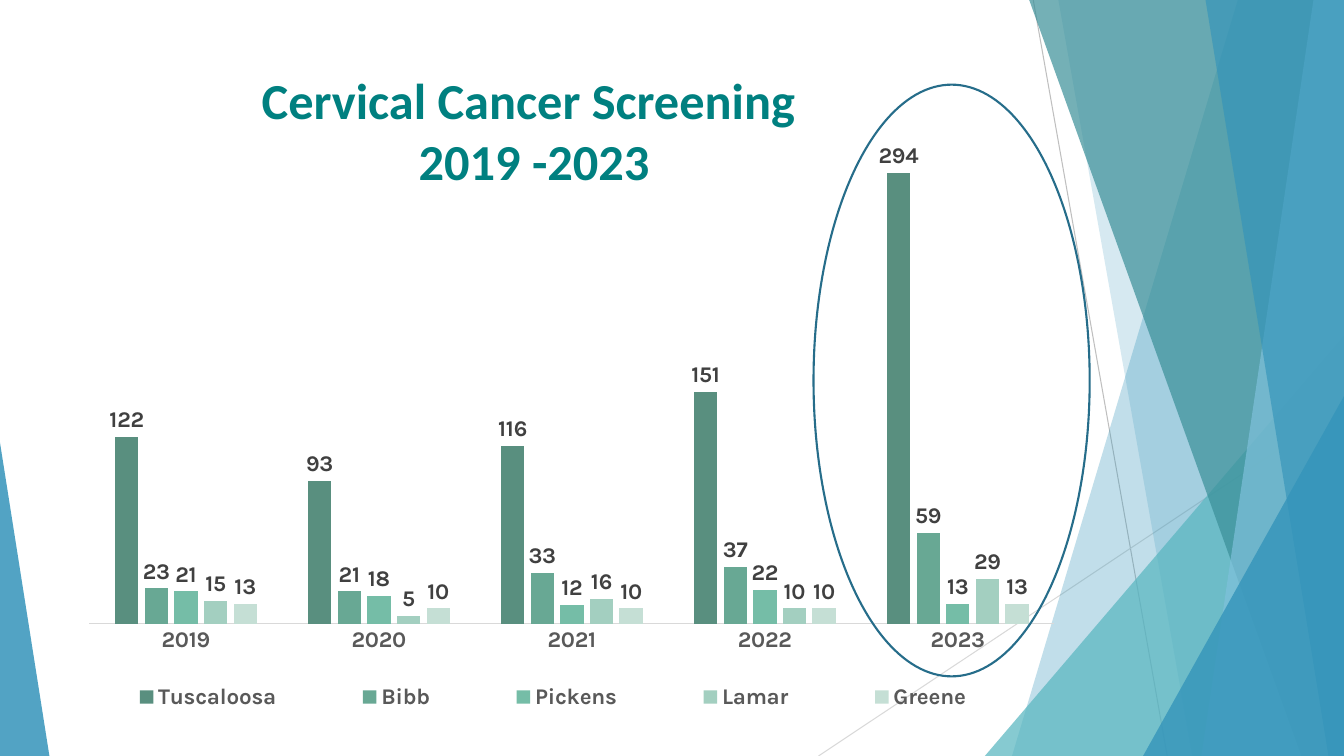
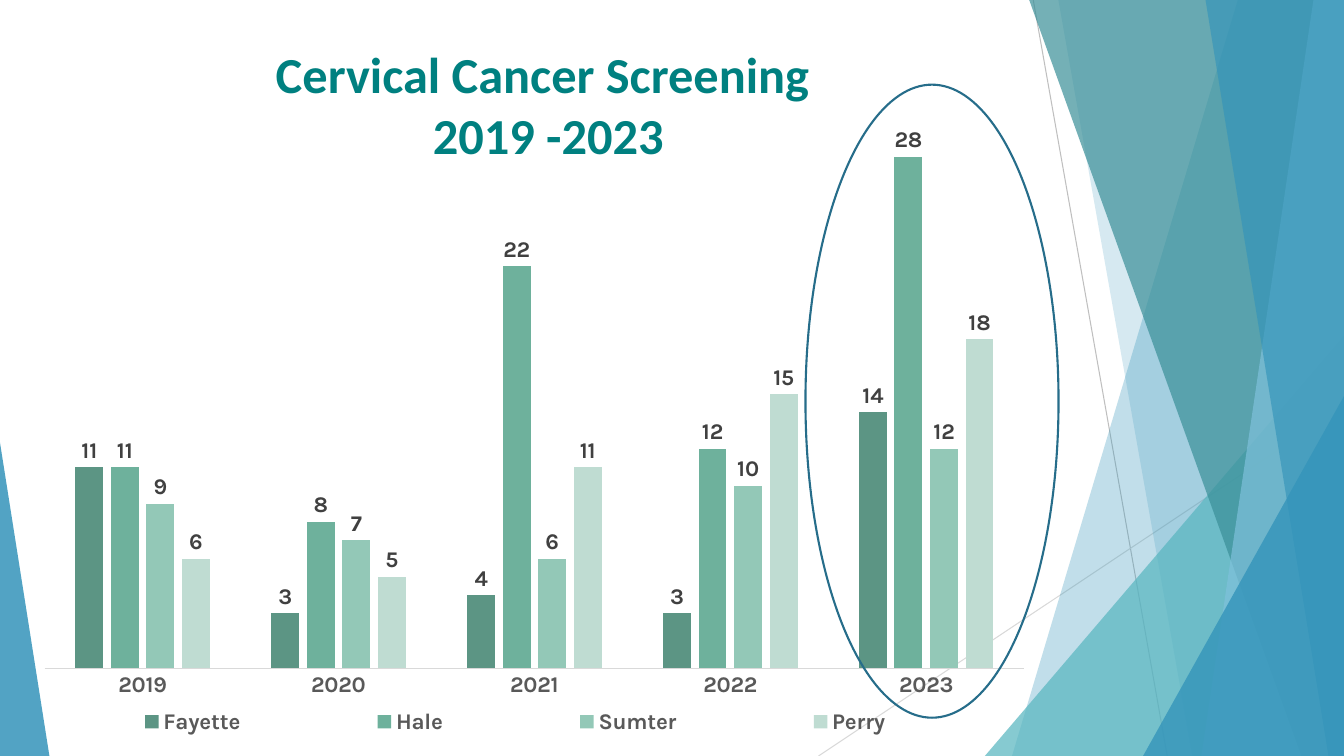
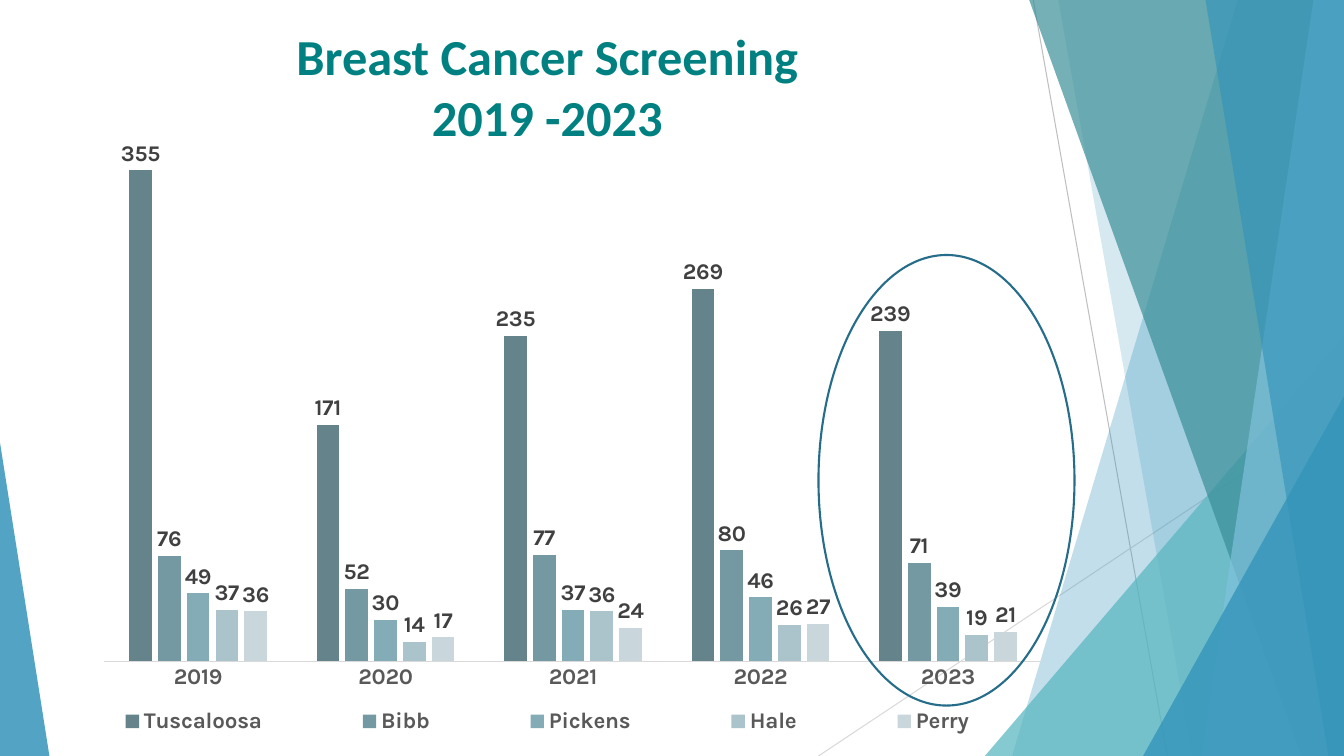
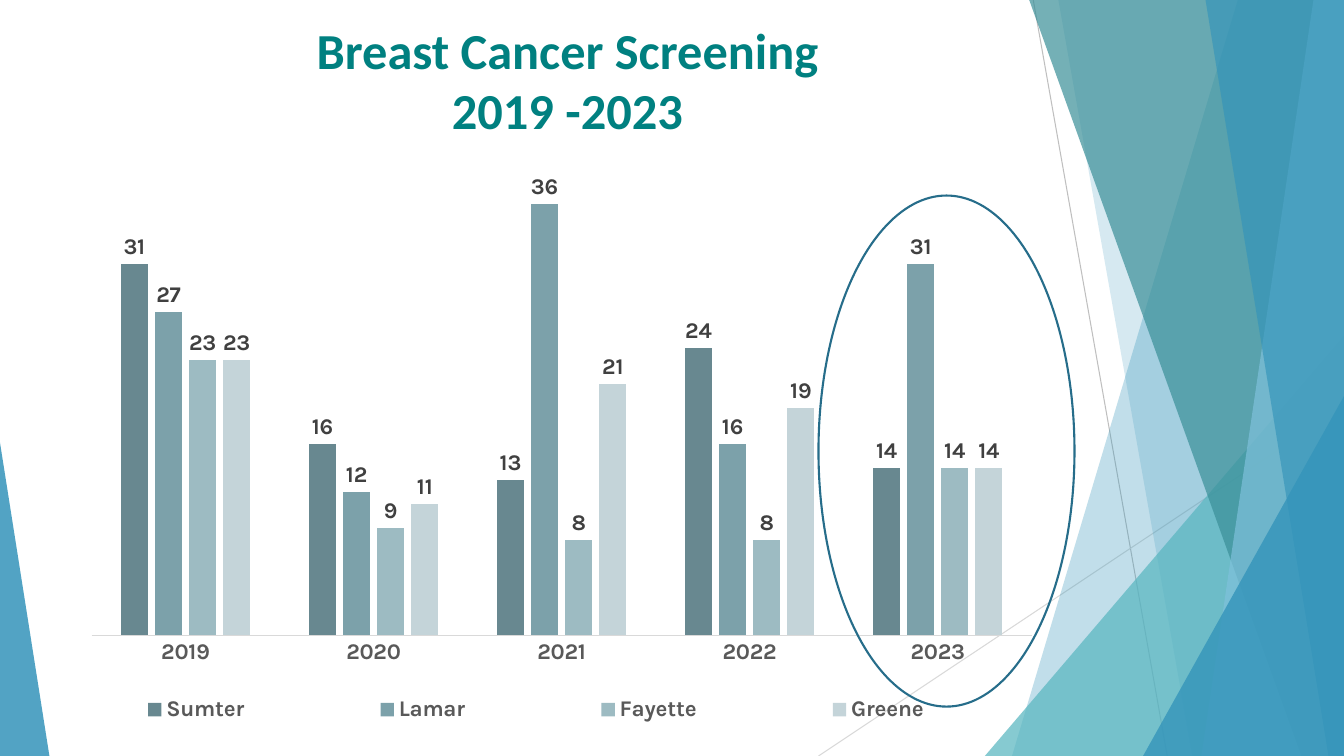
from pptx import Presentation
from pptx.chart.data import CategoryChartData as ChartData
from pptx.dml.color import RGBColor
from pptx.enum.chart import XL_CHART_TYPE as ChartType
from pptx.enum.chart import XL_LABEL_POSITION as LabelPosition
from pptx.enum.chart import XL_LEGEND_POSITION as LegendPosition
from pptx.enum.chart import XL_TICK_MARK as TickMark
from pptx.enum.shapes import MSO_CONNECTOR as Connector
from pptx.enum.shapes import MSO_SHAPE as Shape
from pptx.enum.text import MSO_ANCHOR as Anchor
from pptx.enum.text import PP_ALIGN as Align
from pptx.oxml import parse_xml
from pptx.oxml.ns import nsdecls, qn
from pptx.util import Inches, Pt

YEARS = ["2019", "2020", "2021", "2022", "2023"]
CERVICAL = ["Cervical Cancer Screening ", "2019 -2023"]
BREAST = ["Breast Cancer Screening", "2019 -2023"]
TITLE_HEIGHT = 19.2
BLUE, TEAL, SEA, SKY = "3494BA", "58B6C0", "3A8F98", "7FC1DB"

PAGES = [
    dict(
        title=CERVICAL, title_at=(4.5, 8.53, 70.5),
        chart_at=(4.5, 8.53, 74.4, 88.27), ring_at=(60.53, 11.2, 20.55, 78.27),
        top=350, plot=(0.029, 0.034, 0.965, 0.804), legend_width=0.985,
        series=[
            ("Tuscaloosa", "598F7F", [122, 93, 116, 151, 294]),
            ("Bibb", "68A894", [23, 21, 33, 37, 59]),
            ("Pickens", "75BDA7", [21, 18, 12, 22, 13]),
            ("Lamar", "A3CFC0", [15, 5, 16, 10, 29]),
            ("Greene", "C5DFD5", [13, 10, 10, 10, 13]),
        ],
    ),
    dict(
        title=CERVICAL, title_at=(5.55, 5.07, 70.5),
        chart_at=(1.13, 12.93, 75.53, 87.07), ring_at=(59.93, 11.2, 18.83, 83.73),
        top=30, plot=(0.029, 0.034, 0.965, 0.833), legend_width=0.985,
        series=[
            ("Fayette", "5C9584", [11, 3, 4, 3, 14]),
            ("Hale", "6EB19C", [11, 8, 22, 12, 28]),
            ("Sumter", "93C8B7", [9, 7, 6, 10, 12]),
            ("Perry", "BFDCD2", [6, 5, 11, 15, 18]),
        ],
    ),
    dict(
        title=BREAST, title_at=(3.23, 2.67, 75),
        chart_at=(2.4, 12.27, 76.65, 87.73), ring_at=(60.9, 33.73, 19.05, 59.6),
        top=400, plot=(0.07, 0.023, 0.91, 0.834), legend_width=1,
        series=[
            ("Tuscaloosa", "64838A", [355, 171, 235, 269, 239]),
            ("Bibb", "7599A2", [76, 52, 77, 80, 71]),
            ("Pickens", "84ACB6", [49, 30, 37, 46, 39]),
            ("Hale", "ABC3CA", [37, 14, 36, 26, 19]),
            ("Perry", "C9D7DC", [36, 17, 24, 27, 21]),
        ],
    ),
    dict(
        title=BREAST, title_at=(4.73, 1.87, 75),
        chart_at=(1.43, 8.67, 76.88, 89.87), ring_at=(60.9, 25.87, 19.05, 67.6),
        top=40, plot=(0.07, 0.133, 0.91, 0.706), legend_width=1,
        series=[
            ("Sumter", "688890", [31, 16, 13, 24, 14]),
            ("Lamar", "7CA1AA", [27, 12, 36, 16, 31]),
            ("Fayette", "9DBBC2", [23, 9, 8, 8, 14]),
            ("Greene", "C4D4D9", [23, 11, 21, 19, 14]),
        ],
    ),
]


def colour(code):
    return RGBColor.from_string(code)


def style_font(font, size, shade, name="Karla", bold=True):
    font.size, font.name, font.bold = Pt(size), name, bold
    font.color.rgb = colour(shade)


def write(para, text, **format):
    span = para.add_run()
    span.text = text
    style_font(span.font, **format)


def set_layout(parent, index, area, target=""):
    for old in parent.findall(qn("c:layout")):
        parent.remove(old)
    sizes = "".join(f'<c:{tag} val="{value}"/>' for tag, value in zip("xywh", area))
    parent.insert(index, parse_xml(
        f'<c:layout {nsdecls("c")}><c:manualLayout>{target}'
        f'<c:xMode val="edge"/><c:yMode val="edge"/>{sizes}'
        "</c:manualLayout></c:layout>"))


class ScreeningDeck:
    """Holds the deck style and the current page; lengths are percent of the slide."""

    def __init__(self):
        self.deck = Presentation()
        self.deck.slide_width, self.deck.slide_height = Inches(13.333), Inches(7.5)
        self.layout = self.deck.slide_layouts[6]
        self.page = None

    def add_page(self):
        self.page = self.deck.slides.add_slide(self.layout)

    def place(self, *shares):
        sides = (self.deck.slide_width, self.deck.slide_height)
        return [round(share * sides[i % 2] / 100) for i, share in enumerate(shares)]

    def tint(self, shape, shade, opacity):
        shape.shadow.inherit = False
        shape.line.fill.background()
        shape.fill.solid()
        shape.fill.fore_color.rgb = colour(shade)
        paint = shape.element.spPr.find(qn("a:solidFill"))[0]
        paint.append(parse_xml(f'<a:alpha {nsdecls("a")} val="{opacity * 1000}"/>'))
        return shape

    def line(self, ends, shade):
        line = self.page.shapes.add_connector(Connector.STRAIGHT, *self.place(*ends))
        line.line.color.rgb, line.line.width = colour(shade), Pt(0.75)
        line.element.spPr.append(parse_xml(f'<a:effectLst {nsdecls("a")}/>'))
        return line

    def band(self, top_left, bottom_left, shade, opacity):
        corners = [(top_left, 0), (100, 0), (100, 100), (bottom_left, 100)]
        first, *rest = [self.place(*corner) for corner in corners]
        outline = self.page.shapes.build_freeform(*first)
        outline.add_line_segments(rest, close=True)
        return self.tint(outline.convert_to_shape(), shade, opacity)

    def wedge(self, left, top, right, tip, shade, opacity):
        area = self.place(left, top, right - left, 100 - top)
        wedge = self.page.shapes.add_shape(Shape.ISOSCELES_TRIANGLE, *area)
        wedge.adjustments[0] = tip
        return self.tint(wedge, shade, opacity)

    def backdrop(self):
        parts = [
            self.line((76.88, 0, 86.85, 100), "BFBFBF"),
            self.line((100, 53.73, 60.9, 100), "D9D9D9"),
            self.band(92.1, 75.3, BLUE, 30),
            self.band(78.75, 88.73, BLUE, 20),
            self.wedge(73.28, 44.4, 100, 1, TEAL, 72),
            self.band(76.58, 96.83, SEA, 70),
            self.band(97.73, 89.4, SKY, 70),
            self.band(89.7, 98.85, BLUE, 65),
            self.wedge(85.05, 52.4, 100, 1, BLUE, 80),
            self.wedge(0, 58.53, 3.68, 0, BLUE, 85),
        ]
        for part in parts:
            self.layout.element.cSld.spTree.append(part.element)

    def title(self, lines, area):
        box = self.page.shapes.add_textbox(*self.place(*area, TITLE_HEIGHT))
        frame = box.text_frame
        frame.word_wrap, frame.vertical_anchor = True, Anchor.TOP
        para = frame.paragraphs[0]
        para.alignment = Align.CENTER
        for number, text in enumerate(lines):
            if number:
                para.add_line_break()
            write(para, text, size=36, shade="008080", name="Calibri")

    def chart(self, series, area, top, plot_area, legend_width):
        data = ChartData(number_format="#,##0")
        data.categories = YEARS
        for name, _, values in series:
            data.add_series(name, values)
        chart = self.page.shapes.add_chart(
            ChartType.COLUMN_CLUSTERED, *self.place(*area), data).chart
        style_font(chart.font, 10, "000000", bold=False)
        chart.has_title = False

        years, counts = chart.category_axis, chart.value_axis
        years.major_tick_mark = years.minor_tick_mark = TickMark.NONE
        years.format.line.color.rgb = colour("D9D9D9")
        years.format.line.width = Pt(0.75)
        style_font(years.tick_labels.font, 16, "595959")
        counts.minimum_scale, counts.maximum_scale = 0, top
        counts.has_major_gridlines = counts.visible = False

        plot = chart.plots[0]
        plot.gap_width, plot.overlap, plot.vary_by_categories = 219, -27, False
        for column, (_, shade, _) in zip(plot.series, series):
            column.format.fill.solid()
            column.format.fill.fore_color.rgb = colour(shade)
            labels = column.data_labels
            labels.show_value, labels.position = True, LabelPosition.OUTSIDE_END
            labels.number_format, labels.number_format_is_linked = "#,##0", False
            style_font(labels.font, 16, "404040")

        chart.has_legend = True
        chart.legend.position = LegendPosition.BOTTOM
        chart.legend.include_in_layout = False
        style_font(chart.legend.font, 16, "595959")
        root = chart.element
        set_layout(root.find(".//" + qn("c:plotArea")), 0, plot_area,
                   '<c:layoutTarget val="inner"/>')
        set_layout(root.find(".//" + qn("c:legend")), 1, (0, 0.918, legend_width, 0.06))

    def ring(self, area):
        ring = self.page.shapes.add_shape(Shape.OVAL, *self.place(*area))
        ring.shadow.inherit = False
        ring.fill.background()
        ring.line.color.rgb, ring.line.width = colour("266D8A"), Pt(1.5)


def main():
    show = ScreeningDeck()
    for content in PAGES:
        show.add_page()
        show.title(content["title"], content["title_at"])
        show.chart(content["series"], content["chart_at"], content["top"],
                   content["plot"], content["legend_width"])
        show.ring(content["ring_at"])
    show.backdrop()
    show.deck.save("out.pptx")


if __name__ == "__main__":
    main()
